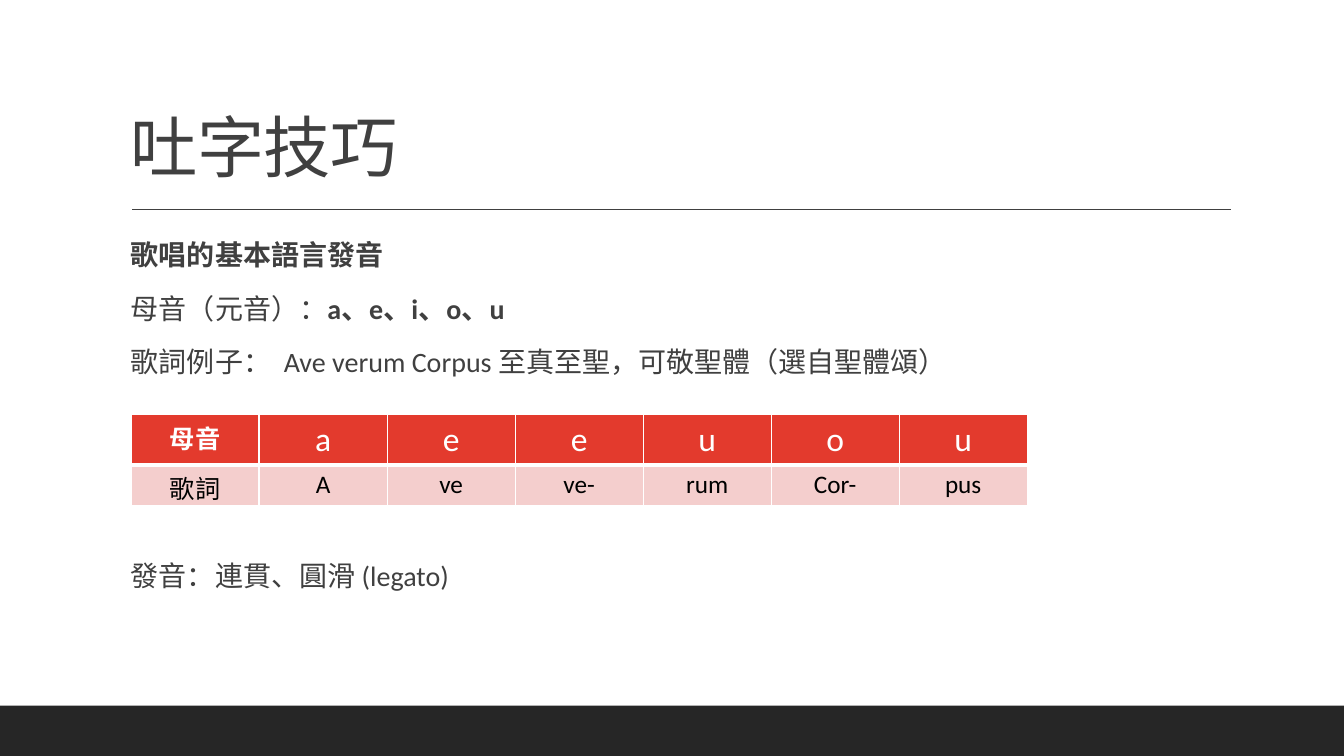
from lxml import etree
from pptx import Presentation
from pptx.dml.color import RGBColor
from pptx.enum.shapes import MSO_CONNECTOR, MSO_SHAPE
from pptx.enum.text import MSO_ANCHOR, PP_ALIGN
from pptx.oxml.ns import qn
from pptx.util import Inches, Pt

STRAIGHT = MSO_CONNECTOR.STRAIGHT
RECTANGLE = MSO_SHAPE.RECTANGLE
TOP, BOTTOM = MSO_ANCHOR.TOP, MSO_ANCHOR.BOTTOM
CENTER = PP_ALIGN.CENTER

WIDTH, HEIGHT = 13.33, 7.5
FONT = "Calibri"
INK, BAR, RED, PINK, WHITE, BLACK = (
    "404040", "262626", "E33A2D", "F4CECD", "FFFFFF", "000000")
LEFT, CONTENT_WIDTH = 1.2, 11
BODY_TOP, LINE_PITCH = 2.31, 0.53

INTRODUCTION = [
    [("歌唱的基本語言發音", True)],
    [("母音（元音）：", False), ("a、e、i、o、u", True)],
    [("歌詞例子：  Ave verum Corpus 至真至聖，可敬聖體（選自聖體頌）", False)],
]
CLOSING = [[("發音：連貫、圓滑 (legato)", False)]]
VOWELS = ["母音", "a", "e", "e", "u", "o", "u"]
LYRICS = ["歌詞", "A", "ve", "ve-", "rum", "Cor-", "pus"]


def color(value):
    return RGBColor.from_string(value)


def add_span(para, text, size=20, ink=INK, bold=False, spacing=None):
    span = para.add_run()
    span.text = text
    span.font.name = FONT
    span.font.size = Pt(size)
    span.font.bold = bold
    span.font.color.rgb = color(ink)
    if spacing is not None:
        span.font._element.set("spc", str(round(spacing * 100)))


def add_text(page, box, lines, anchor=TOP, before=0, after=0, line_spacing=1.0,
             **span_format):
    """Write lines, each a list of (text, bold) pairs, into one text box."""
    frame = page.shapes.add_textbox(*map(Inches, box)).text_frame
    frame.word_wrap = True
    frame.vertical_anchor = anchor
    for index, line in enumerate(lines):
        para = frame.add_paragraph() if index else frame.paragraphs[0]
        para.space_before, para.space_after = Pt(before), Pt(after)
        para.line_spacing = line_spacing
        for text, bold in line:
            add_span(para, text, bold=bold, **span_format)


def set_border(cell, side, width):
    properties = cell._tc.get_or_add_tcPr()
    border = etree.SubElement(properties, qn(f"a:ln{side}"), w=str(Pt(width)))
    fill = etree.SubElement(border, qn("a:solidFill"))
    etree.SubElement(fill, qn("a:srgbClr"), val=WHITE)


def add_backdrop(page, box):
    """Draw the bottom bar and the rule below the title."""
    left, top, width, height = box
    bar = page.shapes.add_shape(RECTANGLE, Inches(left), Inches(top + height - 0.5),
                                Inches(width), Inches(0.5))
    bar.shadow.inherit = False
    bar.fill.solid()
    bar.fill.fore_color.rgb = color(BAR)
    bar.line.fill.background()

    rule_y = Inches(top + 2.08)
    rule = page.shapes.add_connector(STRAIGHT, Inches(left + 1.31), rule_y,
                                     Inches(left + 12.21), rule_y)
    rule.line.color.rgb = color(INK)
    rule.line.width = Pt(1)
    etree.SubElement(rule._element.spPr, qn("a:effectLst"))


def add_title(page, box, text):
    add_text(page, box, [[(text, False)]], anchor=BOTTOM, line_spacing=0.9,
             size=48, spacing=-0.5)


def add_body(page, box, lines):
    add_text(page, box, lines, before=12, after=2)


def add_vowel_table(page, box):
    """Match each vowel with the syllable sung on it."""
    table = page.shapes.add_table(2, len(VOWELS), *map(Inches, box)).table
    for column in table.columns:
        column.width = Inches(box[2] / len(VOWELS))
    for row, words in enumerate((VOWELS, LYRICS)):
        header = row == 0
        borders = {"L": 1, "R": 1, "T": 1 if header else 3, "B": 3 if header else 1}
        for column, word in enumerate(words):
            cell = table.cell(row, column)
            for side, width in borders.items():
                set_border(cell, side, width)
            cell.fill.solid()
            cell.fill.fore_color.rgb = color(RED if header else PINK)
            para = cell.text_frame.paragraphs[0]
            para.alignment = CENTER
            add_span(para, word, size=24 if header and column else 18,
                     ink=WHITE if header else BLACK,
                     bold=header and column == 0)


def main():
    deck = Presentation()
    deck.slide_width, deck.slide_height = Inches(WIDTH), Inches(HEIGHT)
    page = deck.slides.add_slide(deck.slide_layouts[6])
    add_backdrop(page, (0, 0, WIDTH, HEIGHT))
    add_title(page, (LEFT, 0.31, CONTENT_WIDTH, 1.59), "吐字技巧")
    add_body(page, (LEFT, BODY_TOP, CONTENT_WIDTH, 3 * LINE_PITCH), INTRODUCTION)
    add_vowel_table(page, (1.3, 4.11, 8.89, 0.82))
    add_body(page, (LEFT, BODY_TOP + 6 * LINE_PITCH, CONTENT_WIDTH, LINE_PITCH), CLOSING)
    deck.save("out.pptx")


if __name__ == "__main__":
    main()
